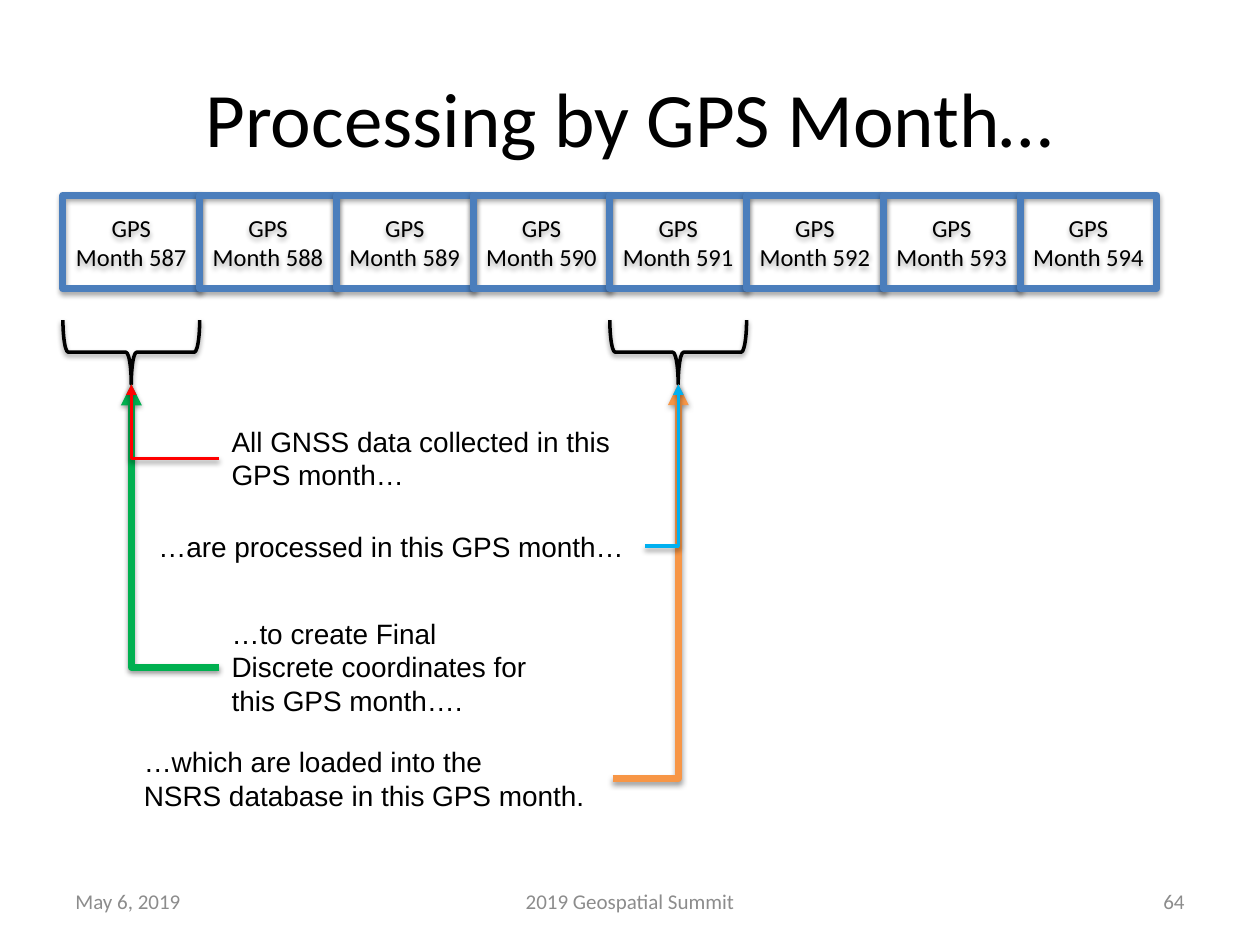
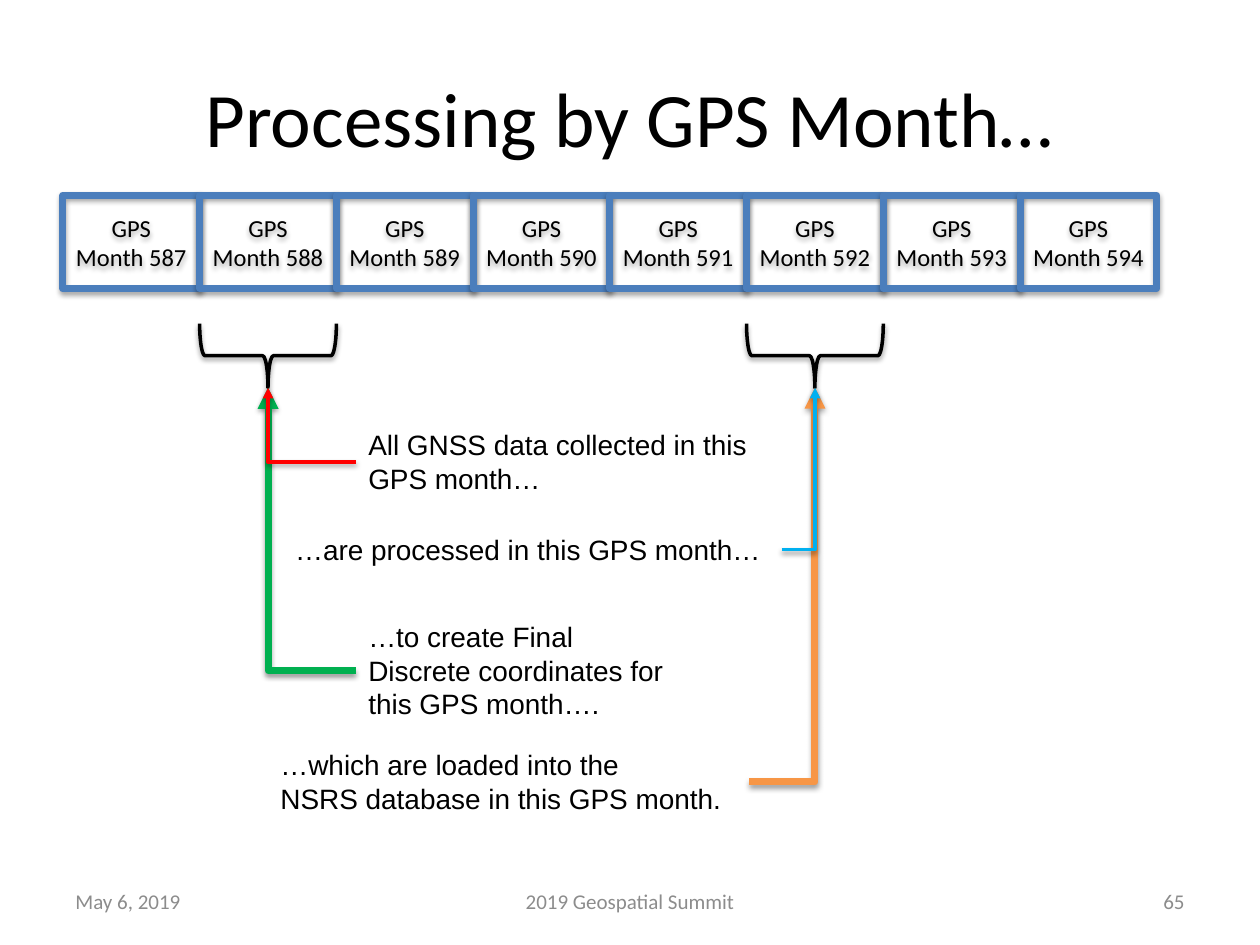
import pptx
import pptx.util
import pptx.dml.color
import pptx.enum.shapes
import pptx.enum.text
import pptx.oxml.ns
import lxml.etree

Pt = pptx.util.Pt
RGBColor = pptx.dml.color.RGBColor
Align = pptx.enum.text.PP_ALIGN
Anchor = pptx.enum.text.MSO_ANCHOR
Shape = pptx.enum.shapes.MSO_SHAPE
qn = pptx.oxml.ns.qn

BLACK = RGBColor(0x00, 0x00, 0x00)
GRAY = RGBColor(0x8C, 0x8C, 0x8C)
STEEL = RGBColor(0x4B, 0x7E, 0xBC)
RED = RGBColor(0xFF, 0x00, 0x00)
CYAN = RGBColor(0x00, 0xB0, 0xF0)
GREEN = RGBColor(0x00, 0xB0, 0x50)
ORANGE = RGBColor(0xF7, 0x96, 0x46)

TITLE = "Processing by GPS Month…"
DATE = "May 6, 2019"
EVENT = "2019 Geospatial Summit"
MONTHS = range(587, 595)
PROCESSING_DELAY = 4

SLIDES = [
    {"number": 64, "collected": 587, "tip": 219.6},
    {"number": 65, "collected": 588, "tip": 221.6},
]

# Offsets are measured from the tip of the collection month's brace.
CALLOUTS = [
    {"lines": ["All GNSS data collected in this", "GPS month…"],
     "offset": (50.2, 19.4), "size": (237.6, 46), "arrow": "collected", "color": RED, "weight": 2},
    {"lines": ["…are processed in this GPS month…"],
     "offset": (8.4, 79.2), "size": (285, 26.6), "arrow": "processed", "color": CYAN, "weight": 2},
    {"lines": ["…to create Final Discrete coordinates for", "this GPS month…."],
     "offset": (50.2, 128.9), "size": (188.6, 65.5), "arrow": "collected", "color": GREEN, "weight": 4},
    {"lines": ["…which are loaded into the", "NSRS database in this GPS month."],
     "offset": (0, 202.3), "size": (275, 46), "arrow": "processed", "color": ORANGE, "weight": 4},
]

MONTH_LEFT, MONTH_TOP = 36, 111.6
MONTH_WIDTH, MONTH_HEIGHT = 78.13, 53.4
BRACE_DEPTH = 36.7


def month_left(month):
    return MONTH_LEFT + (month - MONTHS[0]) * MONTH_WIDTH


def month_middle(month):
    return month_left(month) + MONTH_WIDTH / 2


def fill_text(shape, lines, size, font, color=BLACK, align=Align.LEFT, anchor=Anchor.MIDDLE):
    frame = shape.text_frame
    frame.word_wrap = True
    frame.vertical_anchor = anchor
    frame.text = "\n".join(lines)
    for para in frame.paragraphs:
        para.alignment = align
        for span in para.runs:
            span.font.size = Pt(size)
            span.font.name = font
            span.font.color.rgb = color


def add_text(page, lines, left, top, width, height, *style, **options):
    box = page.shapes.add_textbox(Pt(left), Pt(top), Pt(width), Pt(height))
    fill_text(box, lines, *style, **options)


def add_shadow(shape, opacity, distance):
    effects = lxml.etree.SubElement(shape._element.spPr, qn("a:effectLst"))
    shadow = lxml.etree.SubElement(
        effects, qn("a:outerShdw"), blurRad=str(Pt(3.1)), dist=str(Pt(distance)),
        dir="5400000", rotWithShape="0")
    color = lxml.etree.SubElement(shadow, qn("a:srgbClr"), val=str(BLACK))
    lxml.etree.SubElement(color, qn("a:alpha"), val=str(opacity * 1000))


def add_outline(page, kind, left, top, width, height, color, weight):
    shape = page.shapes.add_shape(kind, Pt(left), Pt(top), Pt(width), Pt(height))
    shape.fill.background()
    shape.line.color.rgb = color
    shape.line.width = Pt(weight)
    return shape


def add_month(page, month):
    box = add_outline(page, Shape.RECTANGLE, month_left(month), MONTH_TOP,
                      MONTH_WIDTH, MONTH_HEIGHT, STEEL, 4)
    add_shadow(box, 35, 1.8)
    fill_text(box, [f"GPS Month {month}"], 14, "Calibri", align=Align.CENTER)
    box.text_frame.margin_left = box.text_frame.margin_right = Pt(7)


def add_brace(page, month, tip):
    brace = add_outline(page, Shape.LEFT_BRACE, month_middle(month) - BRACE_DEPTH / 2,
                        tip - BRACE_DEPTH / 2 - MONTH_WIDTH / 2,
                        BRACE_DEPTH, MONTH_WIDTH, BLACK, 2)
    brace.rotation = 270
    add_shadow(brace, 38, 1.6)


def add_arrow(page, start_x, start_y, end_x, end_y, color, weight):
    turned = start_x > end_x
    points = (end_x, end_y, start_x, start_y) if turned else (start_x, start_y, end_x, end_y)
    arrow = page.shapes.add_connector(
        pptx.enum.shapes.MSO_CONNECTOR.ELBOW, *[Pt(value) for value in points])
    properties = arrow._element.spPr
    properties.find(qn("a:prstGeom")).set("prst", "bentConnector2")
    if turned:
        properties.find(qn("a:xfrm")).set("rot", "10800000")
    arrow.line.color.rgb = color
    arrow.line.width = Pt(weight)
    lxml.etree.SubElement(properties.find(qn("a:ln")), qn("a:tailEnd"), type="triangle")
    add_shadow(arrow, 38, 1.6)


def add_callout(page, callout, collected, tip):
    origin = month_middle(collected)
    left, top = origin + callout["offset"][0], tip + callout["offset"][1]
    width, height = callout["size"]
    add_text(page, callout["lines"], left, top, width, height, 16, "Arial", anchor=Anchor.TOP)
    if callout["arrow"] == "collected":
        start, end = left, origin
    else:
        start, end = left + width, month_middle(collected + PROCESSING_DELAY)
    add_arrow(page, start, top + height / 2, end, tip, callout["color"], callout["weight"])


def add_frame(page, number):
    add_text(page, [TITLE], 36, 21.6, 648, 90, 44, "Calibri", align=Align.CENTER)
    footers = [(DATE, 36, 168, Align.LEFT), (EVENT, 246, 228, Align.CENTER),
               (str(number), 516, 168, Align.RIGHT)]
    for words, left, width, align in footers:
        add_text(page, [words], left, 500.5, width, 28.8, 12, "Calibri", color=GRAY, align=align)


def main():
    deck = pptx.Presentation()
    deck.slide_width, deck.slide_height = Pt(720), Pt(540)
    for content in SLIDES:
        page = deck.slides.add_slide(deck.slide_layouts[6])
        collected, tip = content["collected"], content["tip"]
        add_frame(page, content["number"])
        for month in MONTHS:
            add_month(page, month)
        for month in (collected, collected + PROCESSING_DELAY):
            add_brace(page, month, tip)
        for callout in reversed(CALLOUTS):
            add_callout(page, callout, collected, tip)
    deck.save("out.pptx")


if __name__ == "__main__":
    main()
